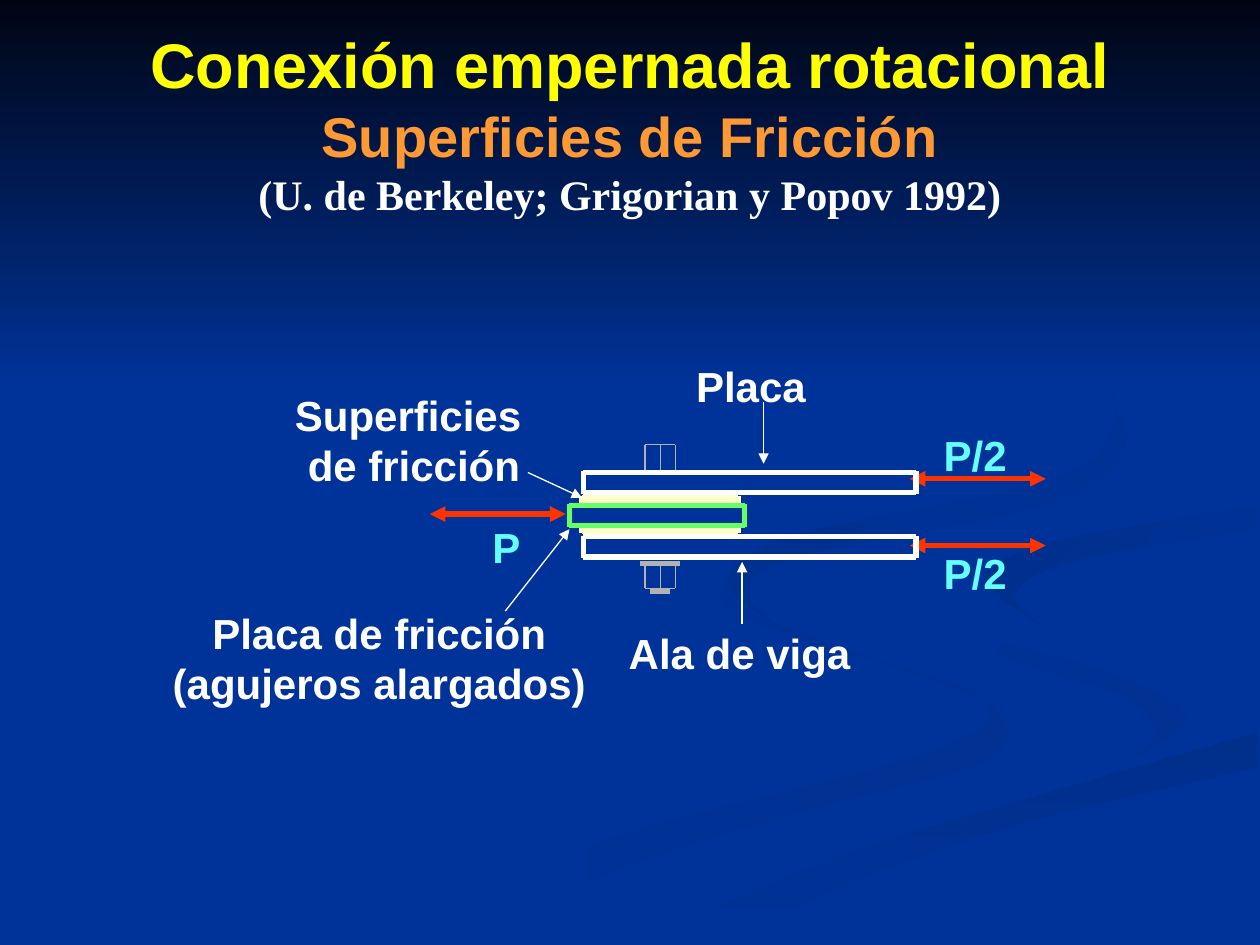
from itertools import chain

from lxml.etree import SubElement
from pptx import Presentation
from pptx.dml.color import RGBColor
from pptx.enum.shapes import MSO_CONNECTOR, MSO_SHAPE
from pptx.enum.text import MSO_ANCHOR, MSO_AUTO_SIZE, PP_ALIGN
from pptx.oxml.ns import qn
from pptx.util import Inches, Pt

SLIDE_WIDTH, SLIDE_HEIGHT = 10, 7.5
NAVY = "003399"
DEEP_NAVY = "002F8C"
SOFT_NAVY = "003193"
NIGHT = "000514"
WHITE = "FFFFFF"
YELLOW = "FFFF00"
ORANGE = "FF9933"
CYAN = "66FFFF"
RED = "FF3300"
CREAM = "FFFFCC"
GREEN = "66FF66"
GRAY = "B2B2B2"

THIN, THICK = 0.75, 3
STEPS_PER_BEND = 5

PLATE_LEFT, PLATE_RIGHT = 4.63, 7.27
PLATE_TOPS = (3.75, 4.26)
PLATE_HEIGHT = 0.16
SURFACE_TOPS = (3.95, 4.18)
SURFACE_HEIGHT = 0.04
BOLT_CENTER, BOLT_HALF_WIDTH, BOLT_LENGTH = 5.24, 0.12, 0.2
LOAD_LENGTH = 1.08

SHORE = [(9.98, 5.81), (8.31, 6.29), (6.62, 6.81), (5.03, 7.49)]


def rgb(code):
    """Return the colour for a hex string."""
    return RGBColor.from_string(code)


def smooth(bends):
    """Return points along a Catmull-Rom curve through the bends."""
    padded = [bends[0], *bends, bends[-1]]
    curve = []
    for before, start, end, after in zip(padded, padded[1:], padded[2:], padded[3:]):
        for step in range(STEPS_PER_BEND):
            t = step / STEPS_PER_BEND
            curve.append(tuple(
                b + t * ((c - a) + t * ((2 * a - 5 * b + 4 * c - d) + t * (3 * b - a - 3 * c + d))) / 2
                for a, b, c, d in zip(before, start, end, after)))
    return [*curve, bends[-1]]


def paint(area, start, end, angle=0):
    """Shade an area from start to end at a clockwise angle, without outline."""
    area.shadow.inherit = False
    area.line.fill.background()
    area.fill.gradient()
    area.fill.gradient_angle = -angle % 360
    for stop, code, position in zip(area.fill.gradient_stops, (start, end), (0, 1)):
        stop.color.rgb = rgb(code)
        stop.position = position


def add_stream(slide, start, end, angle, *edges):
    """Add a flowing band whose smooth edges follow one another around it."""
    outline = [(Inches(x), Inches(y)) for x, y in chain.from_iterable(map(smooth, edges))]
    builder = slide.shapes.build_freeform(*outline[0])
    builder.add_line_segments(outline[1:], close=True)
    paint(builder.convert_to_shape(), start, end, angle)


def add_text(slide, left, top, width, height, lines, wrap=False):
    """Add centred bold lines, each given as text, size, colour and font."""
    frame = slide.shapes.add_textbox(*map(Inches, (left, top, width, height))).text_frame
    frame.word_wrap = wrap
    frame.auto_size = MSO_AUTO_SIZE.NONE if wrap else MSO_AUTO_SIZE.SHAPE_TO_FIT_TEXT
    frame.vertical_anchor = MSO_ANCHOR.MIDDLE if wrap else MSO_ANCHOR.TOP
    for index, (text, size, color, font) in enumerate(lines):
        paragraph = frame.add_paragraph() if index else frame.paragraphs[0]
        paragraph.text = text
        paragraph.alignment = PP_ALIGN.CENTER
        paragraph.font.name = font
        paragraph.font.size = Pt(size)
        paragraph.font.bold = True
        paragraph.font.color.rgb = rgb(color)


def add_label(slide, left, top, width, *texts, color=WHITE):
    """Add a diagram label with one line for each text."""
    height = 0.1 + 0.4 * len(texts)
    add_text(slide, left, top, width, height, [(text, 24, color, "Arial") for text in texts])


def add_line(slide, start, end, color, width, arrows=()):
    """Add a straight line with triangles at the named ends."""
    line = slide.shapes.add_connector(MSO_CONNECTOR.STRAIGHT, *map(Inches, (*start, *end)))
    line.line.color.rgb = rgb(color)
    line.line.width = Pt(width)
    properties = line._element.spPr
    for arrow in arrows:
        SubElement(properties.find(qn("a:ln")), qn(f"a:{arrow}"), type="triangle")
    SubElement(properties, qn("a:effectLst"))


def add_pointer(slide, start, end):
    """Add a thin arrow from a label to its part."""
    add_line(slide, start, end, WHITE, THIN, ("tailEnd",))


def add_load(slide, right, y):
    """Add a double-headed load arrow ending at the right."""
    add_line(slide, (right, y), (right - LOAD_LENGTH, y), RED, THICK, ("headEnd", "tailEnd"))


def add_plate(slide, left, top, right, height, color):
    """Add a plate seen edge-on as four strokes whose upright ends overshoot."""
    bottom = top + height
    for y in (top, bottom):
        add_line(slide, (left, y), (right, y), color, THICK)
    for x in (right, left):
        add_line(slide, (x, top - 0.01), (x, bottom + 0.01), color, THICK)


def add_bolt_end(slide, inner, outer):
    """Add one end of the bolt, with its axis, between two heights."""
    left, right = BOLT_CENTER - BOLT_HALF_WIDTH, BOLT_CENTER + BOLT_HALF_WIDTH
    for x in (left, BOLT_CENTER, right):
        add_line(slide, (x, inner), (x, outer), GRAY, THIN)
    add_line(slide, (left, outer), (right, outer), GRAY, THIN)


def add_background(slide):
    """Add the streams, from back to front, and the night sky."""
    slide.background.fill.solid()
    slide.background.fill.fore_color.rgb = rgb(NAVY)
    add_stream(
        slide, NAVY, SOFT_NAVY, 0,
        [(5.75, 4.59), (5.72, 4.76), (6.11, 4.99), (6.97, 5.25), (7.7, 5.51),
         (7.83, 5.74), (7.14, 6.05), (5.39, 6.49), (4.17, 6.9), (3, 7.49)],
        [(3.61, 7.49), (4.99, 6.87), (6.51, 6.4), (7.69, 6.09), (8, 5.81),
         (7.67, 5.47), (6.82, 5.19), (5.94, 4.85), (5.75, 4.59)])
    add_stream(
        slide, NAVY, SOFT_NAVY, 45,
        [(7.24, 4.64), (7.58, 4.98), (8.3, 5.19), (9.05, 5.4), (9.43, 5.7), (8.94, 6.05)],
        [(8.94, 6.05), (9.18, 5.81), (8.92, 5.53), (8.38, 5.36), (7.46, 5), (7.24, 4.64)])
    add_stream(
        slide, DEEP_NAVY, NAVY, 90, SHORE,
        [(5.71, 7.49), (6.95, 6.92), (8.21, 6.51), (9.98, 6.09)])
    add_stream(
        slide, NAVY, NAVY, 0, SHORE,
        [(4.77, 7.49), (7.04, 6.55), (8.92, 6.05), (9.43, 5.7), (8.71, 5.3),
         (7.59, 4.98), (7.25, 4.64), (7.55, 4.32), (8.74, 4.08), (9.98, 3.87)],
        [(9.98, 4.02), (8.65, 4.24), (7.81, 4.63), (8.32, 4.98), (9.23, 5.23), (9.98, 5.38)])
    add_stream(
        slide, DEEP_NAVY, NAVY, 45,
        [(9.98, 4.02), (8.98, 4.18), (8.21, 4.34), (7.81, 4.6), (8.26, 4.96)],
        [(8.26, 4.96), (8.05, 4.72), (8.43, 4.48), (9.36, 4.29), (9.98, 4.2)])
    add_stream(
        slide, DEEP_NAVY, NAVY, 45,
        [(7.62, 2.33), (8.43, 2.75), (8.94, 3.44), (8.55, 3.91), (7.39, 4.21),
         (6.24, 4.44), (5.93, 4.7), (6.22, 5)],
        [(6.22, 5), (5.77, 4.62), (6.25, 4.26), (7.63, 3.98), (8.61, 3.7),
         (8.85, 3.2), (8.46, 2.79), (7.62, 2.33)])
    sky = slide.shapes.add_shape(MSO_SHAPE.RECTANGLE, 0, 0, Inches(SLIDE_WIDTH), Inches(3.08))
    paint(sky, NIGHT, NAVY, 90)


def add_connection(slide):
    """Add the plates, the friction surfaces and the bolt."""
    for top in SURFACE_TOPS:
        add_plate(slide, 4.62, top, 5.86, SURFACE_HEIGHT, CREAM)
    add_plate(slide, 4.52, 4.01, 5.91, PLATE_HEIGHT, GREEN)
    for top in PLATE_TOPS:
        add_plate(slide, PLATE_LEFT, top, PLATE_RIGHT, PLATE_HEIGHT, WHITE)
    add_bolt_end(slide, 3.73, 3.73 - BOLT_LENGTH)
    add_bolt_end(slide, 4.47, 4.47 + BOLT_LENGTH)
    for half_width, y in ((0.16, 4.47), (0.08, 4.69)):
        add_line(slide, (BOLT_CENTER + half_width, y), (BOLT_CENTER - half_width, y), GRAY, THICK)


def add_loads(slide):
    """Add the load on the friction plate and its two halves opposite."""
    add_load(slide, 4.49, 4.08)
    add_label(slide, 3.81, 4.09, 0.42, "P", color=CYAN)
    for y, label_top in ((3.8, 3.36), (4.33, 4.3)):
        add_load(slide, 8.3, y)
        add_label(slide, 7.39, label_top, 0.7, "P/2", color=CYAN)


def add_part_names(slide):
    """Name each part and point to it."""
    add_label(slide, 4.89, 4.93, 1.96, "Ala de viga")
    add_pointer(slide, (5.89, 4.95), (5.89, 4.46))
    add_label(slide, 5.38, 2.81, 1.16, "Placa ")
    add_pointer(slide, (6.06, 3.19), (6.06, 3.68))
    add_label(slide, 1.27, 4.77, 3.48, "Placa de fricción", "(agujeros alargados)")
    add_pointer(slide, (4.01, 4.85), (4.52, 4.2))
    add_label(slide, 2.24, 3.04, 2.09, "Superficies ", "de fricción")
    add_pointer(slide, (4.19, 3.75), (4.62, 3.95))


def main():
    """Build and save the slide."""
    deck = Presentation()
    deck.slide_width, deck.slide_height = Inches(SLIDE_WIDTH), Inches(SLIDE_HEIGHT)
    slide = deck.slides.add_slide(deck.slide_layouts[6])
    add_background(slide)
    add_text(slide, 0, 0.16, SLIDE_WIDTH, 1.62, [
        ("Conexión empernada rotacional", 36, YELLOW, "Arial"),
        ("Superficies de Fricción", 32, ORANGE, "Arial"),
        ("(U. de Berkeley; Grigorian y Popov 1992)", 24, WHITE, "Times New Roman"),
    ], wrap=True)
    add_loads(slide)
    add_connection(slide)
    add_part_names(slide)
    deck.save("out.pptx")


if __name__ == "__main__":
    main()
